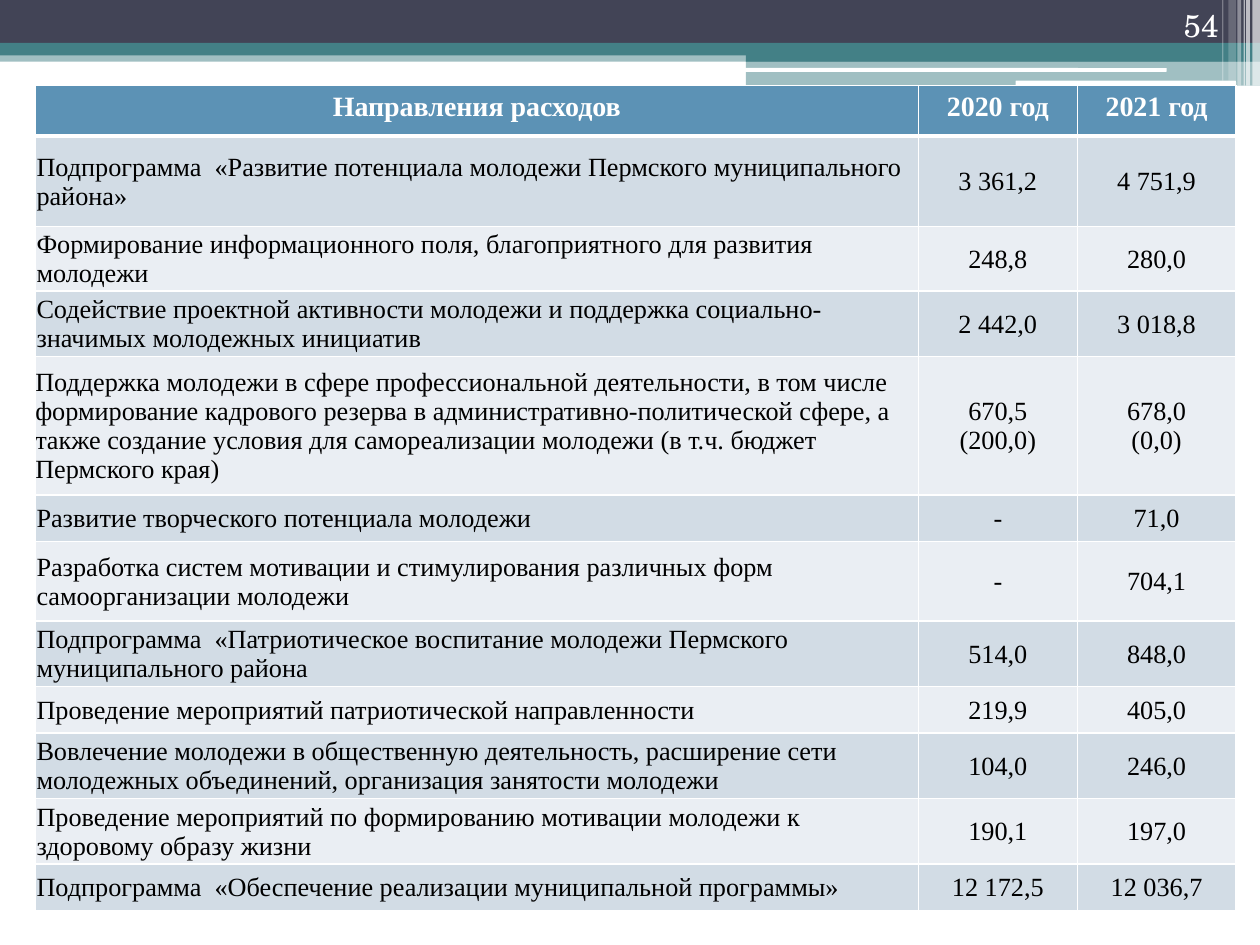
import pptx
import pptx.util
from lxml import etree
from pptx.dml.color import RGBColor
from pptx.enum.shapes import MSO_SHAPE
from pptx.enum.text import MSO_ANCHOR, PP_ALIGN
from pptx.oxml.ns import qn
from pptx.util import Inches, Pt

WHITE = RGBColor(0xFF, 0xFF, 0xFF)
BLACK = RGBColor(0x00, 0x00, 0x00)
NAVY = RGBColor(0x42, 0x44, 0x56)
TEAL = RGBColor(0x43, 0x80, 0x86)
HEADER_BLUE = RGBColor(0x5C, 0x92, 0xB5)
DARK_BAND = RGBColor(0xD2, 0xDC, 0xE5)
LIGHT_BAND = RGBColor(0xEA, 0xEE, 0xF3)

PAGE_NUMBER = "54"
HEADERS = ("Направления расходов", "2020 год", "2021 год")
HEADER_HEIGHT = 0.4
COLUMN_WIDTHS = (7.01, 1.26, 1.26)

# Row height, expense item, 2020, 2021
EXPENSES = [
    (0.72, "Подпрограмма  «Развитие потенциала молодежи Пермского муниципального района»",
     "3 361,2", "4 751,9"),
    (0.4, "Формирование информационного поля, благоприятного для развития молодежи",
     "248,8", "280,0"),
    (0.52, "Содействие проектной активности молодежи и поддержка "
           "социально-значимых молодежных инициатив", "2 442,0", "3 018,8"),
    (0.87, "Поддержка молодежи в сфере профессиональной деятельности, в том числе "
           "формирование кадрового резерва в административно-политической сфере, "
           "а также создание условия для самореализации молодежи "
           "(в т.ч. бюджет Пермского края)", "670,5\n(200,0)", "678,0\n(0,0)"),
    (0.37, "Развитие творческого потенциала молодежи", "-", "71,0"),
    (0.63, "Разработка систем мотивации и стимулирования различных форм "
           "самоорганизации молодежи", "-", "704,1"),
    (0.52, "Подпрограмма  «Патриотическое воспитание молодежи Пермского "
           "муниципального района", "514,0", "848,0"),
    (0.37, "Проведение мероприятий патриотической направленности", "219,9", "405,0"),
    (0.52, "Вовлечение молодежи в общественную деятельность, расширение сети "
           "молодежных объединений, организация занятости молодежи", "104,0", "246,0"),
    (0.52, "Проведение мероприятий по формированию мотивации молодежи к "
           "здоровому образу жизни", "190,1", "197,0"),
    (0.37, "Подпрограмма  «Обеспечение реализации муниципальной программы»",
     "12 172,5", "12 036,7"),
]
PADDED_ROW = 4  # its item cell has wider margins

RECTANGLE, ROUNDED = MSO_SHAPE.RECTANGLE, MSO_SHAPE.ROUNDED_RECTANGLE
# Shape, left, top, width, height, colour, opacity in percent
BANNER = [
    (RECTANGLE, 0, 0.4, 10, 0.09, TEAL, 50),
    (RECTANGLE, 0, 0, 10, 0.34, NAVY, 100),
    (RECTANGLE, 0, 0.34, 10, 0.1, TEAL, 100),
    (RECTANGLE, 5.92, 0.39, 4.08, 0.1, TEAL, 100),
    (RECTANGLE, 5.92, 0.48, 4.08, 0.2, TEAL, 50),
    (ROUNDED, 5.91, 0.54, 3.35, 0.03, WHITE, 100),
    (ROUNDED, 8.06, 0.64, 1.75, 0.04, WHITE, 100),
]
# Left, width, height, opacity in percent
STRIPES = [
    (9.94, 0.06, 0.68, 65), (9.89, 0.03, 0.68, 65), (9.87, 0.01, 0.68, 60),
    (9.82, 0.03, 0.68, 40), (9.75, 0.06, 0.64, 20), (9.7, 0.01, 0.64, 30),
]


def add_block(slide, kind, left, top, width, height, color, opacity):
    shape = slide.shapes.add_shape(
        kind, Inches(left), Inches(top), Inches(width), Inches(height))
    shape.shadow.inherit = False
    shape.line.fill.background()
    shape.fill.solid()
    shape.fill.fore_color.rgb = color
    if opacity < 100:
        color_element = shape.fill._xPr.find(qn("a:solidFill"))[0]
        etree.SubElement(color_element, qn("a:alpha"), val=str(opacity * 1000))


def set_borders(cell, bottom_width):
    """Draw white borders, which must precede the fill in the cell properties."""
    properties = cell._tc.get_or_add_tcPr()
    widths = {"a:lnL": 1, "a:lnR": 1, "a:lnT": 1, "a:lnB": bottom_width}
    for position, (tag, width) in enumerate(widths.items()):
        line = etree.Element(qn(tag), w=str(Pt(width)))
        fill = etree.SubElement(line, qn("a:solidFill"))
        etree.SubElement(fill, qn("a:srgbClr"), val=str(WHITE))
        properties.insert(position, line)


def format_cell(cell, text, fill, margins, size, color, bold, alignment, anchor):
    cell.text_frame.text = text
    cell.vertical_anchor = anchor
    (cell.margin_left, cell.margin_top,
     cell.margin_right, cell.margin_bottom) = map(Inches, margins)
    cell.fill.solid()
    cell.fill.fore_color.rgb = fill
    for paragraph in cell.text_frame.paragraphs:
        paragraph.alignment = alignment
        for run in paragraph.runs:
            run.font.name = "Times New Roman"
            run.font.size = Pt(size)
            run.font.bold = bold
            run.font.color.rgb = color


def add_expense_table(slide):
    heights = [HEADER_HEIGHT] + [expense[0] for expense in EXPENSES]
    table = slide.shapes.add_table(
        len(heights), len(HEADERS), Inches(0.28), Inches(0.68),
        Inches(sum(COLUMN_WIDTHS)), Inches(sum(heights))).table
    for column, width in zip(table.columns, COLUMN_WIDTHS):
        column.width = Inches(width)
    for row, height in zip(table.rows, heights):
        row.height = Inches(height)

    for column, text in enumerate(HEADERS):
        cell = table.cell(0, column)
        format_cell(cell, text, HEADER_BLUE, (0.1, 0.05, 0.1, 0.05), 16, WHITE,
                    True, PP_ALIGN.CENTER, MSO_ANCHOR.TOP)
        set_borders(cell, 3)

    for row, (_, *texts) in enumerate(EXPENSES, start=1):
        fill = DARK_BAND if row % 2 else LIGHT_BAND
        for column, text in enumerate(texts):
            padded = row == PADDED_ROW and column == 0
            margins = (0, 0.05, 0.1, 0.05) if padded else (0.01, 0.01, 0.01, 0)
            alignment = PP_ALIGN.CENTER if column else PP_ALIGN.LEFT
            cell = table.cell(row, column)
            format_cell(cell, text, fill, margins, 15, BLACK, False,
                        alignment, MSO_ANCHOR.MIDDLE)
            set_borders(cell, 1)
            if row == 1:
                cell._tc.tcPr.find(qn("a:lnT")).set("w", str(Pt(3)))


def add_page_number(slide):
    box = slide.shapes.add_textbox(Inches(8.94), Inches(0), Inches(0.83), Inches(0.4))
    frame = box.text_frame
    frame.word_wrap = True
    frame.vertical_anchor = MSO_ANCHOR.BOTTOM
    frame.text = PAGE_NUMBER
    paragraph = frame.paragraphs[0]
    paragraph.alignment = PP_ALIGN.RIGHT
    font = paragraph.runs[0].font
    font.name = "TeX Gyre Schola"
    font.size = Pt(18)
    font.color.rgb = WHITE


def main():
    presentation = pptx.Presentation()
    presentation.slide_width, presentation.slide_height = Inches(10), Inches(7.5)
    slide = presentation.slides.add_slide(presentation.slide_layouts[6])
    for block in BANNER:
        add_block(slide, *block)
    for left, width, height, opacity in STRIPES:
        add_block(slide, RECTANGLE, left, 0, width, height, WHITE, opacity)
    add_page_number(slide)
    add_expense_table(slide)
    presentation.save("out.pptx")


if __name__ == "__main__":
    main()
